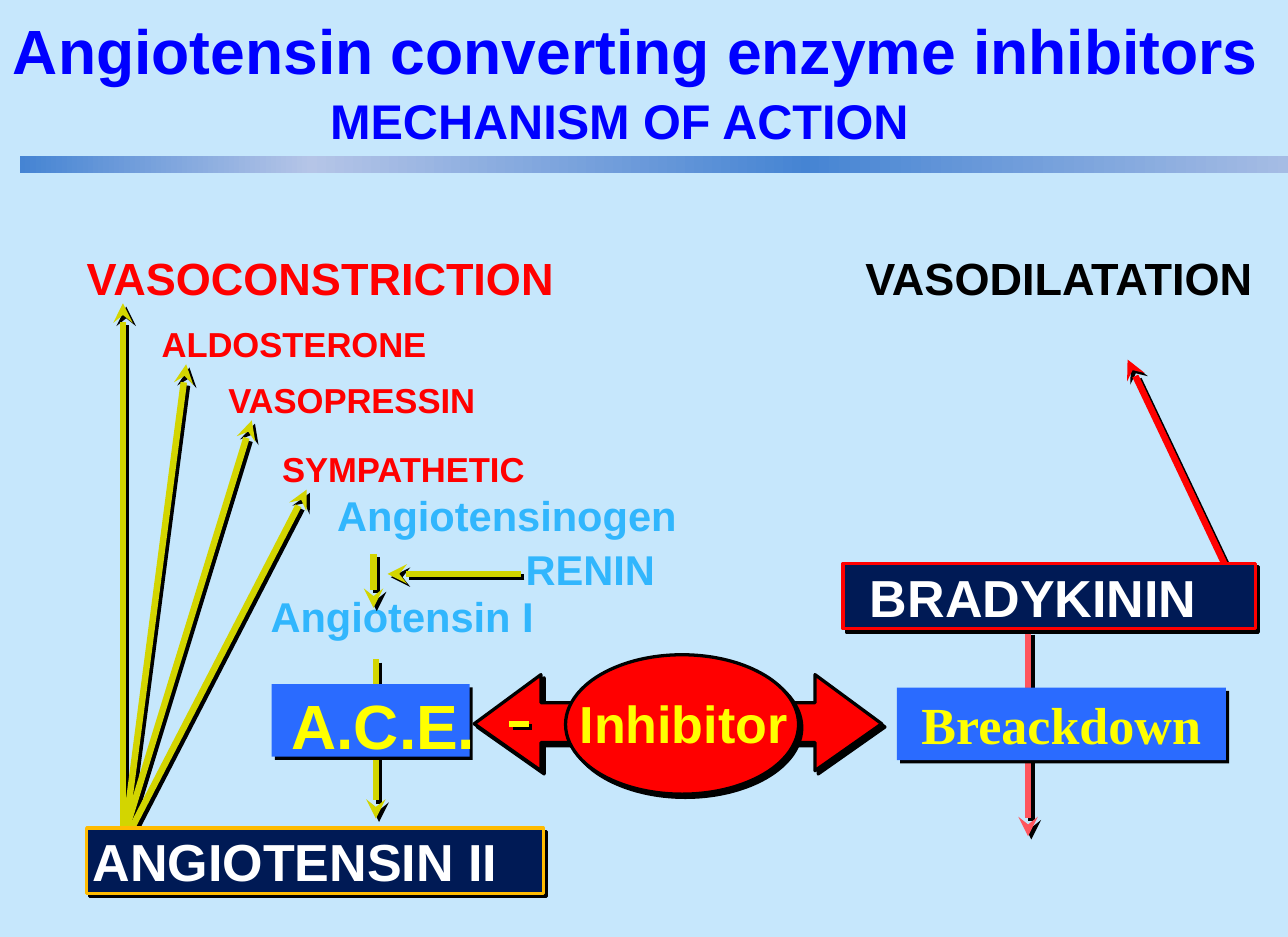
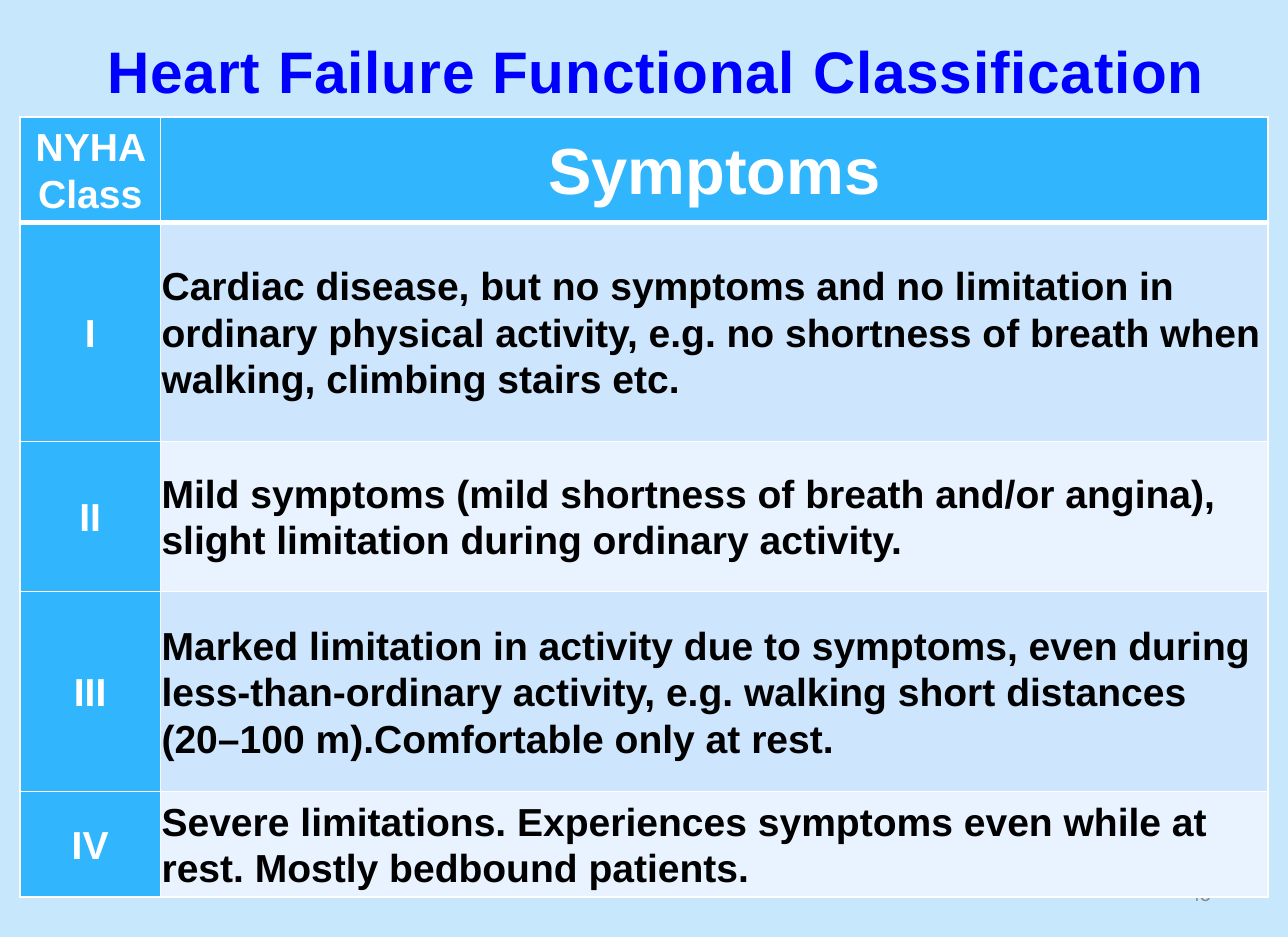
"""Build two slides on ACE inhibitors and heart failure classes."""
from lxml.etree import fromstring
from pptx import Presentation
from pptx.dml.color import RGBColor
from pptx.enum.shapes import MSO_CONNECTOR, MSO_SHAPE
from pptx.enum.text import MSO_ANCHOR, PP_ALIGN
from pptx.util import Inches, Pt

HUES = {
    "sky": "C6E7FC", "title": "0000FF", "red": "FF0000", "black": "000000",
    "cyan": "31B6FD", "olive": "D3D500", "rose": "FF555D", "blue": "2A6BFF",
    "navy": "001A55", "gold": "FFBB00", "yellow": "FFFF00", "white": "FFFFFF",
    "grey": "898989", "steel": "4584D3", "pale": "B5C5E7", "edge": "A5BCE4",
    "odd": "CEE5FE", "even": "E8F3FF",
}
RGB = {name: RGBColor.from_string(code) for name, code in HUES.items()}
NS = 'xmlns:a="http://schemas.openxmlformats.org/drawingml/2006/main"'
CAST = (f'<a:effectLst {NS}><a:outerShdw blurRad="0" dist="35560" dir="2700000" '
        'algn="ctr" rotWithShape="0"><a:srgbClr val="000000"/></a:outerShdw></a:effectLst>')
LEFT, MID, RIGHT = PP_ALIGN.LEFT, PP_ALIGN.CENTER, PP_ALIGN.RIGHT
TOP, HALF = MSO_ANCHOR.TOP, MSO_ANCHOR.MIDDLE


def write(frame, text, size, hue, align=LEFT, lead=None, face="Arial", bold=True, cast=False):
    """Fill a text frame, one paragraph per line of text."""
    frame.text = text
    look = {"size": Pt(size), "name": face, "bold": bold}
    for para in frame.paragraphs:
        para.alignment = align
        para.line_spacing = lead
        font = para.runs[0].font
        font.color.rgb = RGB[hue]
        if cast:
            para.runs[0]._r.get_or_add_rPr().insert(1, fromstring(CAST))
        for key, val in look.items():
            setattr(font, key, val)


def place(frame, side=0.02, edge=0.03, anchor=TOP):
    """Set the wrap, anchor and margins of a text frame."""
    look = {"word_wrap": True, "vertical_anchor": anchor,
            "margin_left": Inches(side), "margin_right": Inches(side),
            "margin_top": Inches(edge), "margin_bottom": Inches(edge)}
    for key, val in look.items():
        setattr(frame, key, val)


prs = Presentation()
prs.slide_width, prs.slide_height = Inches(11), Inches(8)
back = prs.slide_master.background.fill
back.solid()
back.fore_color.rgb = RGB["sky"]

heads = [
    ("Angiotensin converting enzyme inhibitors\nMECHANISM OF ACTION",
     (0, 0.18, 10.86, 1.21), 38.4, Pt(38.4), 0.02, 0.03),
    ("Heart Failure Functional Classification",
     (0.22, 0.25, 10.78, 0.71), 36, None, 0.1, 0.05),
]
slides = []
for text, box, size, lead, side, edge in heads:
    slide = prs.slides.add_slide(prs.slide_layouts[5])
    title = slide.shapes.title
    title.left, title.top, title.width, title.height = map(Inches, box)
    place(title.text_frame, side, edge)
    write(title.text_frame, text, size, "title", MID, lead)
    slides.append(slide)
action, classes = slides

sub = action.shapes.title.text_frame.paragraphs[1]
sub.runs[0].font.size = Pt(29.9)
sub._p.get_or_add_pPr().set("marR", str(Inches(0.28)))

labels = [
    ("VASOCONSTRICTION", 0.72, 2.04, 4.75, 0.71, 27.7, "red", 38.4),
    ("VASODILATATION", 7.37, 2.04, 3.63, 0.71, 27.7, "black", 38.4),
    ("ALDOSTERONE", 1.36, 2.67, 3.41, 0.59, 21.3, "red", 29.9),
    ("VASOPRESSIN", 1.93, 3.14, 3.04, 0.59, 21.3, "red", 29.9),
    ("SYMPATHETIC", 2.39, 3.73, 2.45, 0.59, 21.3, "red", 29.9),
    ("Angiotensinogen", 2.86, 4.27, 3, 0.49, 25.6, "cyan", 22.4),
    ("RENIN", 4.47, 4.73, 1.2, 0.49, 25.6, "cyan", 22.4),
    ("Angiotensin I", 2.29, 5.13, 2.35, 0.49, 25.6, "cyan", 22.4),
]
for text, *box, size, hue, lead in labels:
    frame = action.shapes.add_textbox(*map(Inches, box)).text_frame
    place(frame)
    write(frame, text, size, hue, lead=Pt(lead))

arrows = [
    (8.78, 5.39, 8.78, 7.14, "rose"),
    (3.19, 4.73, 3.19, 5.19, "olive"),
    (3.21, 5.63, 3.21, 6.99, "olive"),
    (4.45, 4.9, 3.31, 4.9, "olive"),
    (1.05, 7.08, 1.05, 2.59, "olive"),
    (1.08, 7.01, 1.59, 3.11, "olive"),
    (1.08, 7.07, 2.15, 3.59, "olive"),
    (1.11, 7.1, 2.62, 4.18, "olive"),
    (10.47, 4.84, 9.63, 3.07, "red"),
]
blocks = []
half = [(5.44, 6), (5.44, 6.34), (4.62, 6.34), (4.62, 6.58),
        (4.05, 6.18), (4.62, 5.76), (4.62, 6)]
for points in (half, [(11.58 - x, y) for x, y in half]):
    spots = [(Inches(x), Inches(y)) for x, y in points]
    path = action.shapes.build_freeform(*spots[0])
    path.add_line_segments(spots[1:])
    blocks.append((path.convert_to_shape(), "red", "black"))

oval, rect = MSO_SHAPE.OVAL, MSO_SHAPE.RECTANGLE
forms = [
    (oval, 4.83, 5.59, 1.99, 1.19, "red", "black"),
    (rect, 7.66, 5.87, 2.81, 0.62, "blue", None),
    (rect, 0.74, 7.07, 3.9, 0.56, "navy", "gold"),
    (rect, 7.2, 4.81, 3.52, 0.56, "navy", "red"),
    (rect, 2.32, 5.84, 1.69, 0.62, "blue", None),
]
strokes = []
for x, y, right, low, hue in arrows:
    line = action.shapes.add_connector(MSO_CONNECTOR.STRAIGHT, *map(Inches, (x, y, right, low)))
    strokes.append((line, hue, True))
    blocks[0][0]._element.addprevious(line._element)
for kind, *box, fill, edge in forms:
    blocks.append((action.shapes.add_shape(kind, *map(Inches, box)), fill, edge))
minus = action.shapes.add_connector(
    MSO_CONNECTOR.STRAIGHT, *map(Inches, (4.35, 6.18, 4.52, 6.18)))
strokes.append((minus, "yellow", False))

for shape, fill, edge in blocks:
    shape.fill.solid()
    shape.fill.fore_color.rgb = RGB[fill]
    if edge:
        shape.line.color.rgb = RGB[edge]
        shape.line.width = Pt(2)
    else:
        shape.line.fill.background()
    shape._element.spPr.append(fromstring(CAST))
for line, hue, tip in strokes:
    line.line.color.rgb = RGB[hue]
    line.line.width = Pt(4)
    if tip:
        line.line._ln.append(fromstring(f'<a:tailEnd {NS} type="stealth"/>'))
    line._element.spPr.append(fromstring(CAST))

decay = blocks[3][0].text_frame
place(decay, 0.1, 0.05, HALF)
write(decay, "Breackdown", 32, "yellow", MID, face="Times New Roman")

names = [
    ("Inhibitor", 4.82, 5.87, 2.04, 0.71, 32, "yellow", MID, 38.4),
    ("ANGIOTENSIN II", 0.77, 7.05, 3.82, 0.71, 32, "white", LEFT, 38.4),
    ("BRADYKININ", 7.41, 4.8, 3.34, 0.71, 32, "white", LEFT, 38.4),
    ("A.C.E.", 2.09, 5.84, 2.37, 0.81, 38.4, "yellow", MID, 45.9),
]
for text, *box, size, hue, align, lead in names:
    frame = action.shapes.add_textbox(*map(Inches, box)).text_frame
    place(frame)
    write(frame, text, size, hue, align, Pt(lead), cast=True)

bands = [(6.82, 4.18, "steel", "edge"), (0.17, 2.5, "steel", "pale"),
         (2.63, 4.29, "pale", "steel")]
for x, width, start, stop in bands:
    band = action.shapes.add_shape(rect, *map(Inches, (x, 1.33, width, 0.15)))
    band.shadow.inherit = False
    band.line.fill.background()
    band.fill.gradient()
    band.fill.gradient_angle = 0
    for mark, hue in zip(band.fill.gradient_stops, (start, stop)):
        mark.color.rgb = RGB[hue]

font = classes.shapes.title.text_frame.paragraphs[0].runs[0].font
font._rPr.set("spc", "50")
font._rPr.insert(0, fromstring(
    f'<a:ln {NS} w="11430"><a:solidFill><a:srgbClr val="{HUES["cyan"]}"/></a:solidFill></a:ln>'))

page = classes.shapes.add_textbox(*map(Inches, (7.88, 7.41, 2.57, 0.43))).text_frame
place(page, 0.11, 0.05, HALF)
write(page, "48", 13, "grey", RIGHT, face="Calibri", bold=False)

rows = [
    ("NYHA Class", "Symptoms", 0.9),
    ("I", "Cardiac disease, but no symptoms and no limitation in ordinary physical activity, "
     "e.g. no shortness of breath when walking, climbing stairs etc.", 1.87),
    ("II", "Mild symptoms (mild shortness of breath and/or angina), "
     "slight limitation during ordinary activity.", 1.28),
    ("III", "Marked limitation in activity due to symptoms, even during less-than-ordinary "
     "activity, e.g. walking short distances\n(20–100 m).Comfortable only at rest.", 1.71),
    ("IV", "Severe limitations. Experiences symptoms even while at rest. "
     "Mostly bedbound patients.", 0.9),
]
table = classes.shapes.add_table(
    len(rows), 2, *map(Inches, (0.17, 1, 10.66, 6.66))).table
for col, width in zip(table.columns, (1.2, 9.46)):
    col.width = Inches(width)
for r, (*texts, height) in enumerate(rows):
    table.rows[r].height = Inches(height)
    for c, text in enumerate(texts):
        cell = table.cell(r, c)
        head, body = r == 0, r > 0 and c == 1
        look = {"margin_left": Inches(0.01), "margin_right": Inches(0.01),
                "margin_top": Inches(0.01), "margin_bottom": Inches(0.01),
                "vertical_anchor": HALF}
        for key, val in look.items():
            setattr(cell, key, val)
        cell.fill.solid()
        cell.fill.fore_color.rgb = RGB[("even", "odd")[r % 2] if body else "cyan"]
        write(cell.text_frame, text, 40 if head and c else 24,
              "black" if body else "white", LEFT if body else MID, 1.07)
        for i, side in enumerate("LRTB"):
            thick = (side == "B" and r == 0) or (side == "T" and r == 1)
            cell._tc.get_or_add_tcPr().insert(i, fromstring(
                f'<a:ln{side} {NS} w="{Pt(3 if thick else 1)}"><a:solidFill>'
                f'<a:srgbClr val="{HUES["white"]}"/></a:solidFill></a:ln{side}>'))

prs.save("out.pptx")
